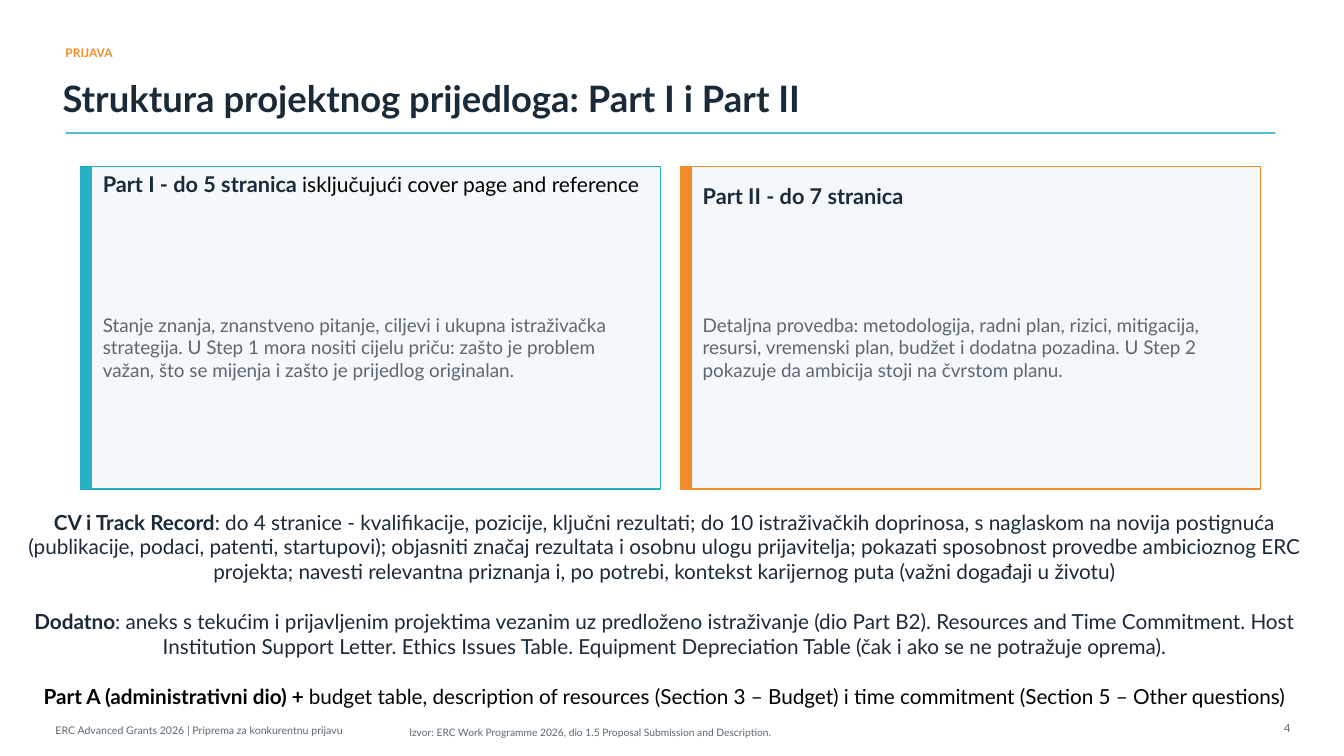
"""Build a slide on the two parts of an ERC project proposal."""
from lxml import etree
from pptx import Presentation
from pptx.dml.color import RGBColor
from pptx.enum.shapes import MSO_CONNECTOR, MSO_SHAPE
from pptx.enum.text import MSO_ANCHOR, MSO_AUTO_SIZE, PP_ALIGN
from pptx.oxml.ns import qn
from pptx.util import Inches, Pt

LEFT, MID, RIGHT = PP_ALIGN.LEFT, PP_ALIGN.CENTER, PP_ALIGN.RIGHT
CENTRE, FIXED = MSO_ANCHOR.MIDDLE, MSO_AUTO_SIZE.NONE
RECT, STRAIGHT = MSO_SHAPE.RECTANGLE, MSO_CONNECTOR.STRAIGHT
FONT = "Lato"
HEX = {"teal": "27AFC4", "orange": "F28C28", "navy": "1B2A38",
       "grey": "5C6770", "pale": "F5F8FA", "black": "000000", "white": "FFFFFF"}
CELL = Inches(0.1)
CARD_X, CARD_Y, CARD_W, CARD_H, GAP = 8, 16.5, 57.5, 32, 2
CARDS = [
    ("teal", 16.8,
     [("Part I - do 5 stranica ", 15.5, "navy", True),
      ("isključujući cover page and reference", 15, "black", False)],
     "Stanje znanja, znanstveno pitanje, ciljevi i ukupna istraživačka strategija. "
     "U Step 1 mora nositi cijelu priču: zašto je problem važan, što se mijenja "
     "i zašto je prijedlog originalan."),
    ("orange", 18,
     [("Part II - do 7 stranica", 15.5, "navy", True)],
     "Detaljna provedba: metodologija, radni plan, rizici, mitigacija, resursi, "
     "vremenski plan, budžet i dodatna pozadina. U Step 2 pokazuje da ambicija "
     "stoji na čvrstom planu."),
]
NOTES = [
    ("navy", "CV i Track Record",
     ": do 4 stranice - kvalifikacije, pozicije, ključni rezultati; do 10 "
     "istraživačkih doprinosa, s naglaskom na novija postignuća (publikacije, podaci, "
     "patenti, startupovi); objasniti značaj rezultata i osobnu ulogu prijavitelja; "
     "pokazati sposobnost provedbe ambicioznog ERC projekta; navesti relevantna "
     "priznanja i, po potrebi, kontekst karijernog puta (važni događaji u životu)"),
    ("navy", "Dodatno",
     ": aneks s tekućim i prijavljenim projektima vezanim uz predloženo istraživanje "
     "(dio Part B2). Resources and Time Commitment. Host Institution Support Letter. "
     "Ethics Issues Table. Equipment Depreciation Table (čak i ako se ne potražuje "
     "oprema)."),
    ("black", "Part A (administrativni dio) + ",
     "budget table, description of resources (Section 3 – Budget) i time commitment "
     "(Section 5 – Other questions)"),
]


def grid(*cells):
    """Turn counts of grid cells into lengths."""
    return [round(CELL * cell) for cell in cells]


def tint(name):
    """Look up a colour by name."""
    return RGBColor.from_string(HEX[name])


def write(shape, paras, align=LEFT, gap=0):
    """Fill a shape with paragraphs, run by run."""
    frame = shape.text_frame
    frame.word_wrap, frame.auto_size = True, FIXED
    frame.vertical_anchor = CENTRE
    frame.margin_left = frame.margin_right = frame.margin_top = frame.margin_bottom = 0
    for i, runs in enumerate(paras):
        para = frame.add_paragraph() if i else frame.paragraphs[0]
        para.alignment = align
        para.space_before = Pt(gap if i else 0)
        for text, size, hue, bold in runs:
            run = para.add_run()
            run.text = text
            run.font.name, run.font.size, run.font.bold = FONT, Pt(size), bold
            run.font.color.rgb = tint(hue)


def label(slide, box, paras, align=LEFT, gap=0):
    """Add a text box on the grid."""
    write(slide.shapes.add_textbox(*grid(*box)), paras, align, gap)


def head(slide, box, text):
    """Place and format the title."""
    title = slide.shapes.title
    title.left, title.top, title.width, title.height = grid(*box)
    write(title, [[(text, 26, "navy", True)]])


def block(slide, box, fill, edge, width):
    """Add a filled box with an outline."""
    shape = slide.shapes.add_shape(RECT, *grid(*box))
    shape.shadow.inherit = False
    shape.fill.solid()
    shape.fill.fore_color.rgb = tint(fill)
    shape.line.color.rgb = tint(edge)
    shape.line.width = Pt(width)


def rule(slide, ends, hue):
    """Add a thin line that is slightly see-through."""
    line = slide.shapes.add_connector(STRAIGHT, *grid(*ends))
    line.line.color.rgb = tint(hue)
    line.line.width = Pt(1.1)
    props = line._element.spPr
    etree.SubElement(props, qn("a:effectLst"))
    shade = props.find(".//" + qn("a:srgbClr"))
    etree.SubElement(shade, qn("a:alpha"), val="80000")


def card(slide, left, hue, top, runs, text):
    """Add a card with a side bar, heading and body."""
    block(slide, (left, CARD_Y, CARD_W, CARD_H), "pale", hue, 1.1)
    block(slide, (left, CARD_Y, 1.1, CARD_H), hue, hue, 1)
    label(slide, (left + 2.2, top, 54, 2.8), [runs])
    label(slide, (left + 2.2, 21.7, 54, 25.5), [[(text, 13.5, "grey", False)]])


def main():
    """Draw and save the slide."""
    deck = Presentation()
    deck.slide_width, deck.slide_height = Inches(13.33), Inches(7.5)
    slide = deck.slides.add_slide(deck.slide_layouts[5])
    slide.background.fill.solid()
    slide.background.fill.fore_color.rgb = tint("white")

    label(slide, (6.5, 4, 118, 2.4), [[("PRIJAVA", 8.5, "orange", True)]])
    head(slide, (6.2, 7, 119, 5.5), "Struktura projektnog prijedloga: Part I i Part II")
    rule(slide, (6.5, 13.2, 126.5, 13.2), "teal")
    for i, parts in enumerate(CARDS):
        card(slide, CARD_X + i * (CARD_W + GAP), *parts)
    notes = [[(lead, 14.8, hue, True), (text, 14.8, hue, False)]
             for hue, lead, text in NOTES]
    label(slide, (2.2, 50.1, 127.4, 20.6), notes, MID, 17.76)

    for box, text, size, align in [
        ((40.6, 71.5, 85.9, 2.3),
         "Izvor: ERC Work Programme 2026, dio 1.5 Proposal Submission and Description.",
         7.3, LEFT),
        ((5.5, 71.5, 74, 2),
         "ERC Advanced Grants 2026 | Priprema za konkurentnu prijavu", 7.5, LEFT),
        ((125.5, 71.2, 2.5, 2), "4", 8, RIGHT),
    ]:
        label(slide, box, [[(text, size, "grey", False)]], align)
    deck.save("out.pptx")


if __name__ == "__main__":
    main()
